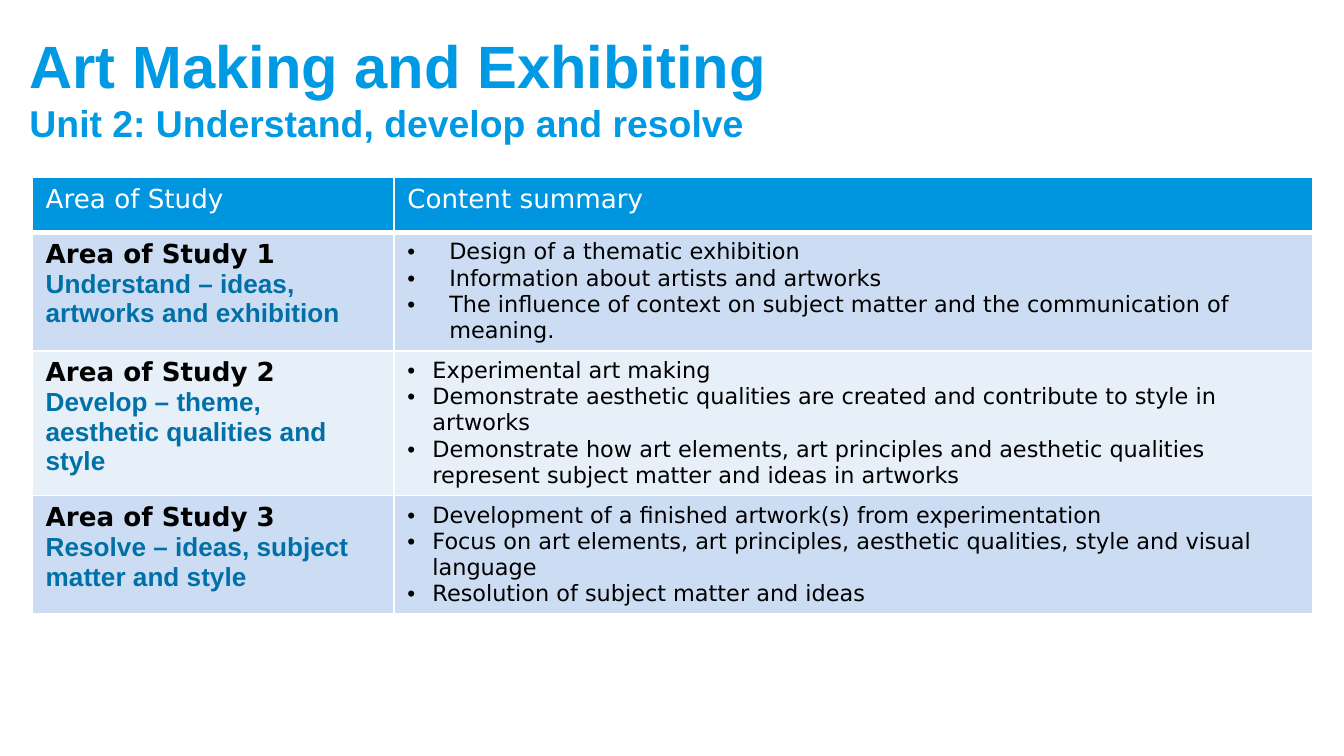
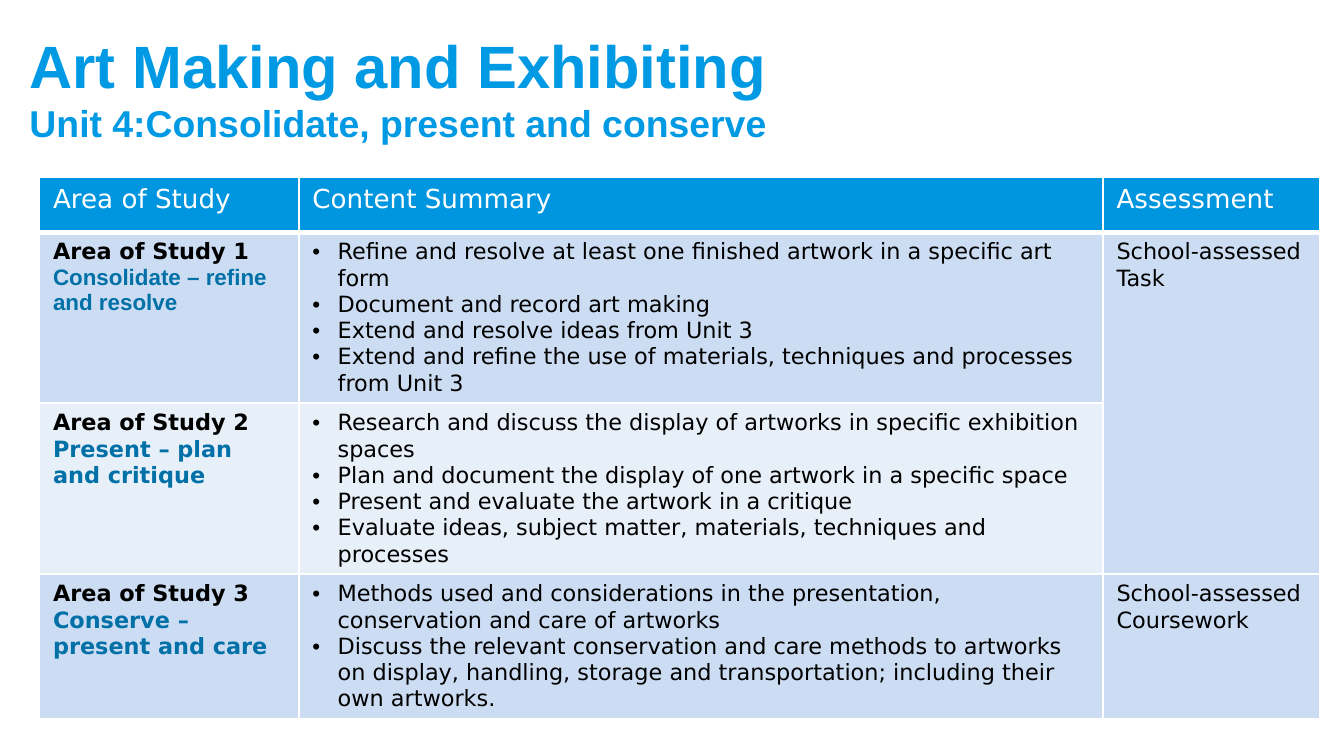
from dataclasses import dataclass

import pptx
import pptx.dml.color
import pptx.enum.text
import pptx.oxml
import pptx.oxml.ns
import pptx.util
from lxml import etree

Pt = pptx.util.Pt
RGB = pptx.dml.color.RGBColor.from_string


@dataclass(frozen=True)
class Theme:
    heading: str = "0099E3"
    header_fill: str = "0096DF"
    bands: tuple = ("CCDDF3", "E7EFF9")
    focus: str = "0070A7"
    text: str = "000000"
    white: str = "FFFFFF"
    heading_font: str = "Arial"
    body_font: str = "DejaVu Sans"
    heading_size: int = 32
    unit_size: int = 20
    header_size: int = 14
    body_size: int = 12
    rule: int = 1
    header_rule: int = 3


THEME = Theme()
SUBJECT = "Art Making and Exhibiting"
TABLE_TOP = 95

UNITS = [
    dict(
        unit="Unit 2: Understand, develop and resolve",
        title_width=694, left=17.3, columns=[193.7, 492.5],
        rows=[29.5, 29.5, 29.5, 21.6], height=209.5, area_size=14,
        headers=["Area of Study", "Content summary"],
        areas=[
            dict(focus="Understand – ideas, artworks and exhibition",
                 focus_font="Arial", indent=22.5,
                 points=["Design of a thematic exhibition",
                         "Information about artists and artworks",
                         "The influence of context on subject matter and the "
                         "communication of meaning."]),
            dict(focus="Develop – theme, aesthetic qualities and style",
                 focus_font="Arial", indent=13.5,
                 points=["Experimental art making",
                         "Demonstrate aesthetic qualities are created and contribute "
                         "to style in artworks",
                         "Demonstrate how art elements, art principles and aesthetic "
                         "qualities represent subject matter and ideas in artworks"]),
            dict(focus="Resolve – ideas, subject matter and style",
                 focus_font="Arial", indent=13.5,
                 points=["Development of a finished artwork(s) from experimentation",
                         "Focus on art elements, art principles, aesthetic qualities, "
                         "style and visual language",
                         "Resolution of subject matter and ideas"]),
        ],
        assessments=[],
    ),
    dict(
        unit="Unit 4:Consolidate, present and conserve",
        title_width=698.5, left=21.2, columns=[139, 430.8, 116],
        rows=[29.5, 10.8, 29.5, 13.7], height=238.3, area_size=12,
        headers=["Area of Study", "Content Summary", "Assessment"],
        areas=[
            dict(focus="Consolidate – refine and resolve",
                 focus_font="Arial", indent=13.5,
                 points=["Refine and resolve at least one finished artwork in a "
                         "specific art form",
                         "Document and record art making",
                         "Extend and resolve ideas from Unit 3",
                         "Extend and refine the use of materials, techniques and "
                         "processes from Unit 3"]),
            dict(focus="Present – plan and critique",
                 focus_font="DejaVu Sans", indent=13.5,
                 points=["Research and discuss the display of artworks in specific "
                         "exhibition spaces",
                         "Plan and document the display of one artwork in a specific space",
                         "Present and evaluate the artwork in a critique",
                         "Evaluate ideas, subject matter, materials, techniques and "
                         "processes"]),
            dict(focus="Conserve – present and care",
                 focus_font="DejaVu Sans", indent=13.5,
                 points=["Methods used and considerations in the presentation, "
                         "conservation and care of artworks",
                         "Discuss the relevant conservation and care methods to artworks "
                         "on display, handling, storage and transportation; including "
                         "their own artworks."]),
        ],
        # (first row, last row, text)
        assessments=[(1, 2, "School-assessed Task"),
                     (3, 3, "School-assessed Coursework")],
    ),
]


def style(font, size, color, name=THEME.body_font, bold=False):
    font.name, font.size, font.bold = name, Pt(size), bold
    font.color.rgb = RGB(color)


def add_bullet(paragraph, indent):
    properties = paragraph._p.get_or_add_pPr()
    properties.set("marL", str(Pt(indent)))
    properties.set("indent", str(-Pt(indent)))
    qn = pptx.oxml.ns.qn
    etree.SubElement(properties, qn("a:buFont"), typeface="Arial")
    etree.SubElement(properties, qn("a:buChar"), char="•")


def paint(cell, fill, bottom=THEME.rule):
    """Give a cell white rules on every side and a solid fill."""
    properties = cell._tc.get_or_add_tcPr()
    for side, width in zip("LRTB", (THEME.rule, THEME.rule, THEME.rule, bottom)):
        properties.append(pptx.oxml.parse_xml(
            f'<a:ln{side} {pptx.oxml.ns.nsdecls("a")} w="{Pt(width)}">'
            f'<a:solidFill><a:srgbClr val="{THEME.white}"/></a:solidFill></a:ln{side}>'))
    cell.fill.solid()
    cell.fill.fore_color.rgb = RGB(fill)


def write_lines(cell, lines):
    """Fill a cell with (text, bullet indent, font settings) lines."""
    frame = cell.text_frame
    for index, (text, indent, font) in enumerate(lines):
        paragraph = frame.add_paragraph() if index else frame.paragraphs[0]
        paragraph.text = text
        if indent:
            add_bullet(paragraph, indent)
        style(paragraph.font, **font)


def add_heading(slide, unit):
    title = slide.shapes.title
    title.left, title.top = Pt(8.6), Pt(15.1)
    title.width, title.height = Pt(unit["title_width"]), Pt(62.6)
    frame = title.text_frame
    frame.word_wrap = True
    frame.auto_size = pptx.enum.text.MSO_AUTO_SIZE.NONE
    frame.vertical_anchor = pptx.enum.text.MSO_ANCHOR.MIDDLE
    paragraph = frame.paragraphs[0]
    paragraph.alignment = pptx.enum.text.PP_ALIGN.LEFT
    for text, size in ((SUBJECT, THEME.heading_size), (unit["unit"], THEME.unit_size)):
        if paragraph.runs:
            paragraph.add_line_break()
        run = paragraph.add_run()
        run.text = text
        style(run.font, size, THEME.heading, THEME.heading_font, True)


def add_areas(slide, unit):
    columns, rows = unit["columns"], unit["rows"]
    holder = slide.shapes.add_table(
        len(rows), len(columns), Pt(unit["left"]), Pt(TABLE_TOP),
        Pt(sum(columns)), Pt(unit["height"]))
    table = holder.table
    for column, width in zip(table.columns, columns):
        column.width = Pt(width)
    for row, height in zip(table.rows, rows):
        row.height = Pt(height)
    holder.height = Pt(unit["height"])

    header = dict(size=THEME.header_size, color=THEME.white)
    body = dict(size=THEME.body_size, color=THEME.text)
    for column, text in enumerate(unit["headers"]):
        paint(table.cell(0, column), THEME.header_fill, THEME.header_rule)
        write_lines(table.cell(0, column), [(text, 0, header)])

    for number, area in enumerate(unit["areas"], 1):
        for column in range(len(columns)):
            paint(table.cell(number, column), THEME.bands[(number - 1) % 2])
        bold = dict(size=unit["area_size"], bold=True)
        write_lines(table.cell(number, 0), [
            (f"Area of Study {number}", 0, dict(bold, color=THEME.text)),
            (area["focus"], 0, dict(bold, color=THEME.focus, name=area["focus_font"]))])
        write_lines(table.cell(number, 1),
                    [(point, area["indent"], body) for point in area["points"]])

    for first, last, text in unit["assessments"]:
        cell = table.cell(first, 2)
        if last > first:
            cell.merge(table.cell(last, 2))
        write_lines(cell, [(text, 0, body)])


def main():
    deck = pptx.Presentation()
    deck.slide_width, deck.slide_height = Pt(720), Pt(405)
    for unit in UNITS:
        slide = deck.slides.add_slide(deck.slide_layouts[5])
        add_heading(slide, unit)
        add_areas(slide, unit)
    deck.save("out.pptx")


if __name__ == "__main__":
    main()
